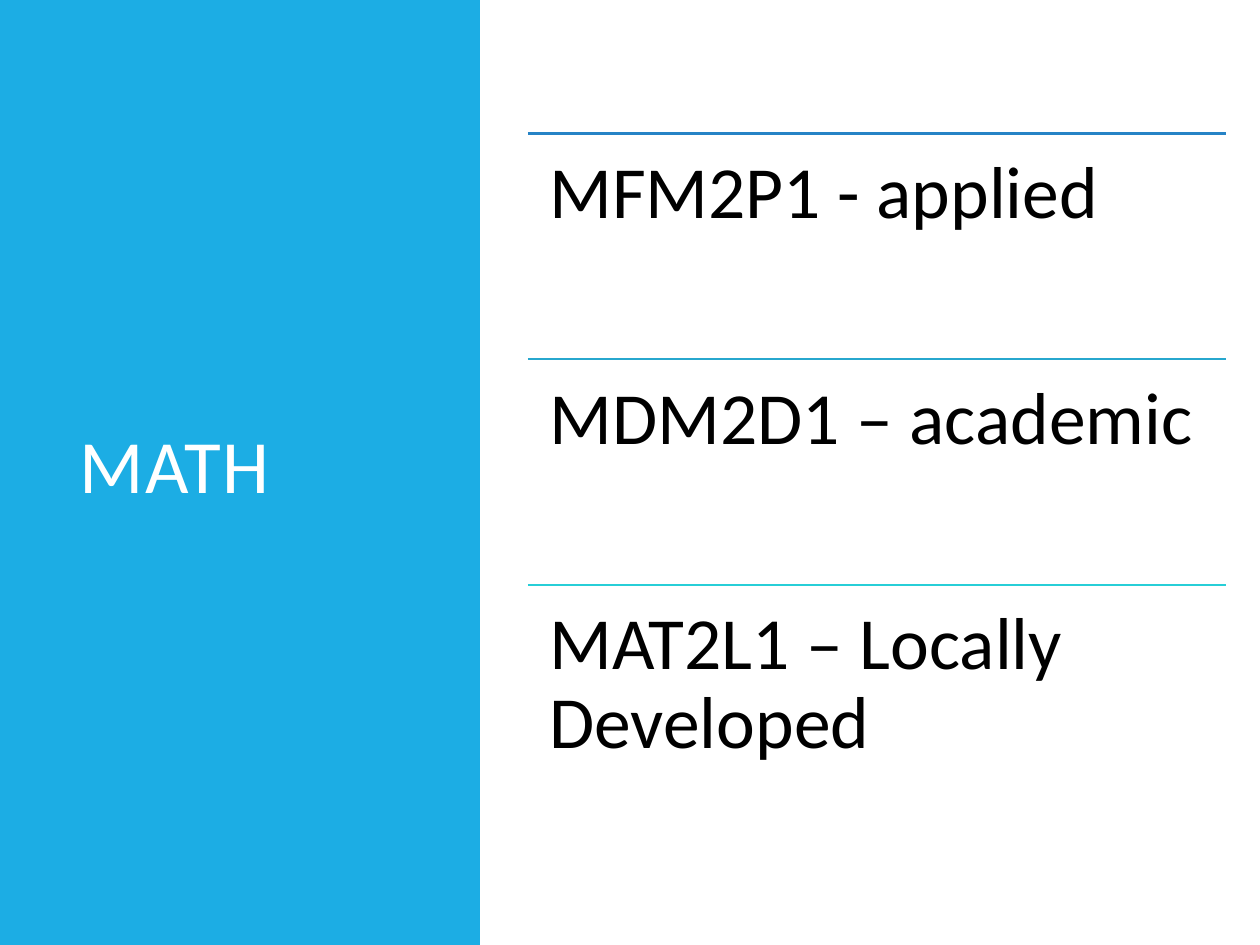
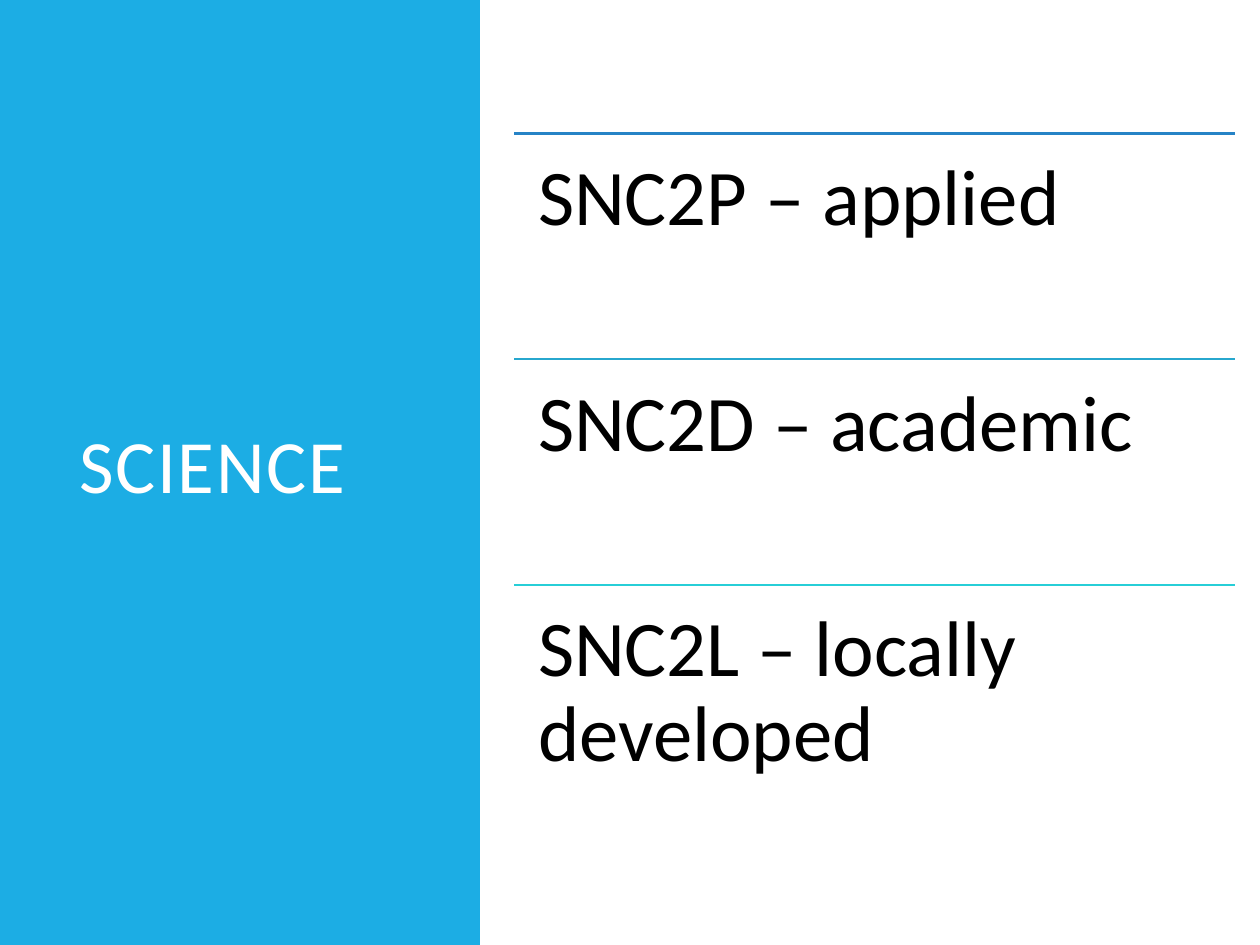
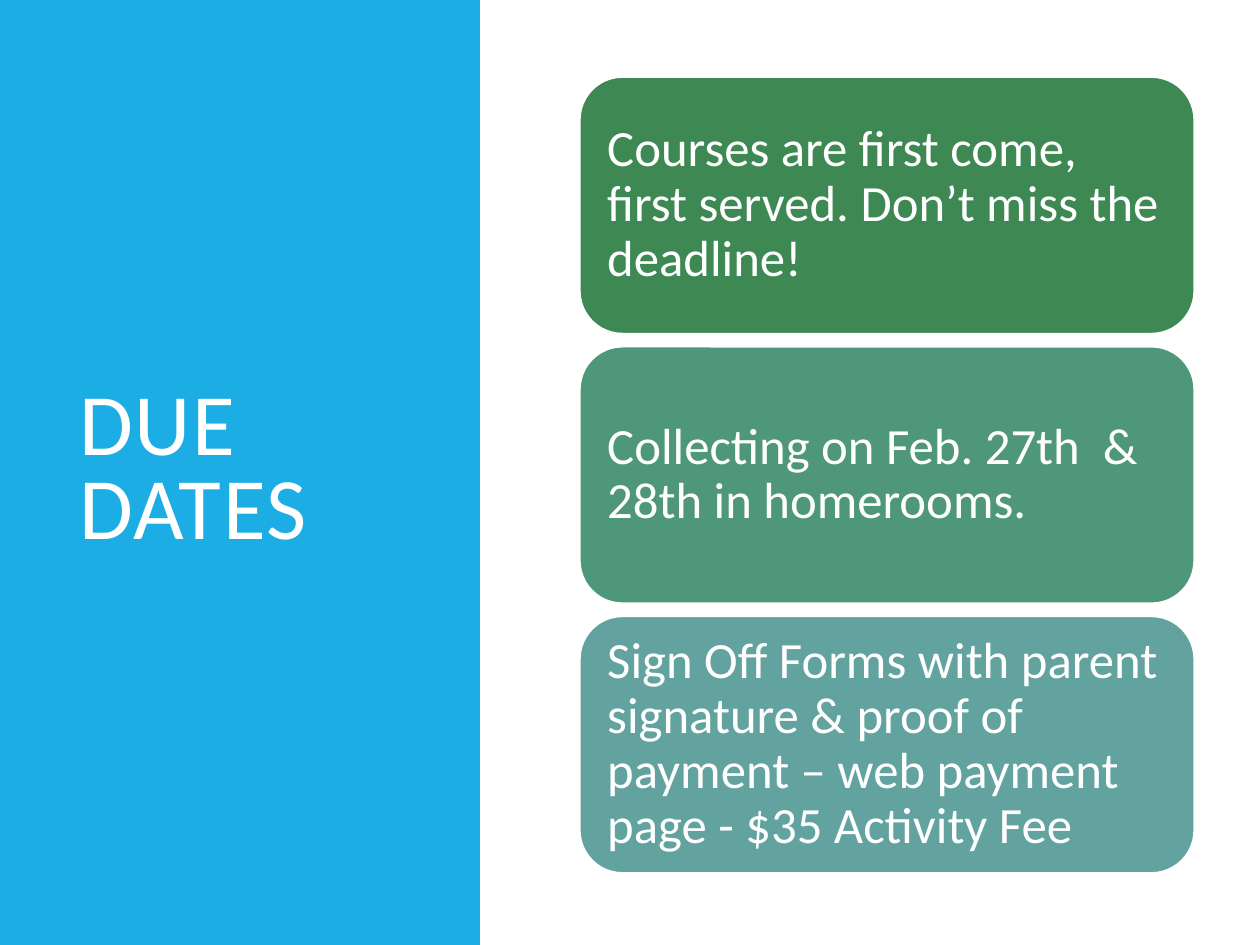
from dataclasses import dataclass

from lxml.etree import SubElement
from pptx import Presentation
from pptx.dml.color import RGBColor
from pptx.enum.shapes import MSO_CONNECTOR, MSO_SHAPE
from pptx.enum.text import MSO_ANCHOR, PP_ALIGN
from pptx.oxml.ns import qn
from pptx.util import Inches, Pt


@dataclass(frozen=True)
class Theme:
    font: str = "Calibri"
    panel: str = "1CADE4"
    light: str = "FFFFFF"
    dark: str = "000000"
    rules: tuple = ("2683C6", "27A7CE", "27CED7")
    cards: tuple = ("3E8853", "4E977B", "62A39F")
    title_size: int = 43
    large_title_size: int = 50
    card_size: int = 29
    line_width: float = 1.25


theme = Theme()
WIDTH, HEIGHT = 10, 7.5
PANEL_WIDTH = 3.81
LIST_TOP, LIST_ROW = 1.06, 1.79
CARD_LEFT, CARD_TOP, CARD_WIDTH, CARD_HEIGHT = 4.6, 0.61, 4.88, 2.04
CARD_STEP = CARD_HEIGHT + 0.1

# title, list left edge, list width, text size, text inset, courses
COURSE_PAGES = [
    ("MATH", 4.19, 5.54, 42, 0.17,
     ["MFM2P1 - applied", "MDM2D1 – academic", "MAT2L1 – Locally Developed"]),
    ("SCIENCE", 4.08, 5.72, 45, 0.19,
     ["SNC2P – applied", "SNC2D – academic", "SNC2L – locally developed"]),
]
DUE_DATES = [
    "Courses are first come, first served. Don’t miss the deadline!",
    "Collecting on Feb. 27th  & 28th in homerooms.",
    "Sign Off Forms with parent signature & proof of "
    "payment – web payment page - $35 Activity Fee",
]


def write(box, text, size, color, inset, anchor, line_spacing=0.9):
    """Fill a shape with one left-aligned paragraph and return its run."""
    frame = box.text_frame
    frame.word_wrap = True
    frame.vertical_anchor = anchor
    frame.margin_left = frame.margin_right = Inches(inset)
    frame.margin_top = frame.margin_bottom = Inches(inset)
    para = frame.paragraphs[0]
    para.alignment = PP_ALIGN.LEFT
    para.line_spacing = line_spacing
    run = para.add_run()
    run.text = text
    run.font.name = theme.font
    run.font.size = Pt(size)
    run.font.color.rgb = RGBColor.from_string(color)
    return run


def add_titled_page(title, size):
    """Add a page with the coloured side panel and its title."""
    page = deck.slides.add_slide(deck.slide_layouts[6])
    panel = page.shapes.add_shape(
        MSO_SHAPE.RECTANGLE, 0, 0, Inches(PANEL_WIDTH), deck.slide_height)
    panel.shadow.inherit = False
    panel.fill.solid()
    panel.fill.fore_color.rgb = RGBColor.from_string(theme.panel)
    panel.line.fill.background()
    box = page.shapes.add_textbox(
        Inches(0.53), Inches(0.7), Inches(2.8), Inches(6.09))
    run = write(box, title, size, theme.light, 0.1, MSO_ANCHOR.MIDDLE, 0.8)
    run.font._element.set("spc", "100")
    return page


deck = Presentation()
deck.slide_width, deck.slide_height = Inches(WIDTH), Inches(HEIGHT)

for title, left, width, size, inset, courses in COURSE_PAGES:
    page = add_titled_page(title, theme.title_size)
    for row, (course, color) in enumerate(zip(courses, theme.rules)):
        top = LIST_TOP + row * LIST_ROW
        rule = page.shapes.add_connector(
            MSO_CONNECTOR.STRAIGHT, Inches(left), Inches(top),
            Inches(left + width), Inches(top))
        rule.line.color.rgb = RGBColor.from_string(color)
        rule.line.width = Pt(theme.line_width)
        SubElement(rule._element.spPr, qn("a:effectLst"))
        box = page.shapes.add_textbox(
            Inches(left), Inches(top), Inches(width), Inches(LIST_ROW))
        write(box, course, size, theme.dark, inset, MSO_ANCHOR.TOP)

page = add_titled_page("DUE DATES", theme.large_title_size)
for row, (notice, color) in enumerate(zip(DUE_DATES, theme.cards)):
    card = page.shapes.add_shape(
        MSO_SHAPE.ROUNDED_RECTANGLE, Inches(CARD_LEFT),
        Inches(CARD_TOP + row * CARD_STEP), Inches(CARD_WIDTH), Inches(CARD_HEIGHT))
    card.shadow.inherit = False
    card.fill.solid()
    card.fill.fore_color.rgb = RGBColor.from_string(color)
    card.line.color.rgb = RGBColor.from_string(theme.light)
    card.line.width = Pt(theme.line_width)
    # A rounded rectangle already insets its text by about 0.1 inch
    write(card, notice, theme.card_size, theme.light, 0.12, MSO_ANCHOR.MIDDLE)

deck.save("out.pptx")
